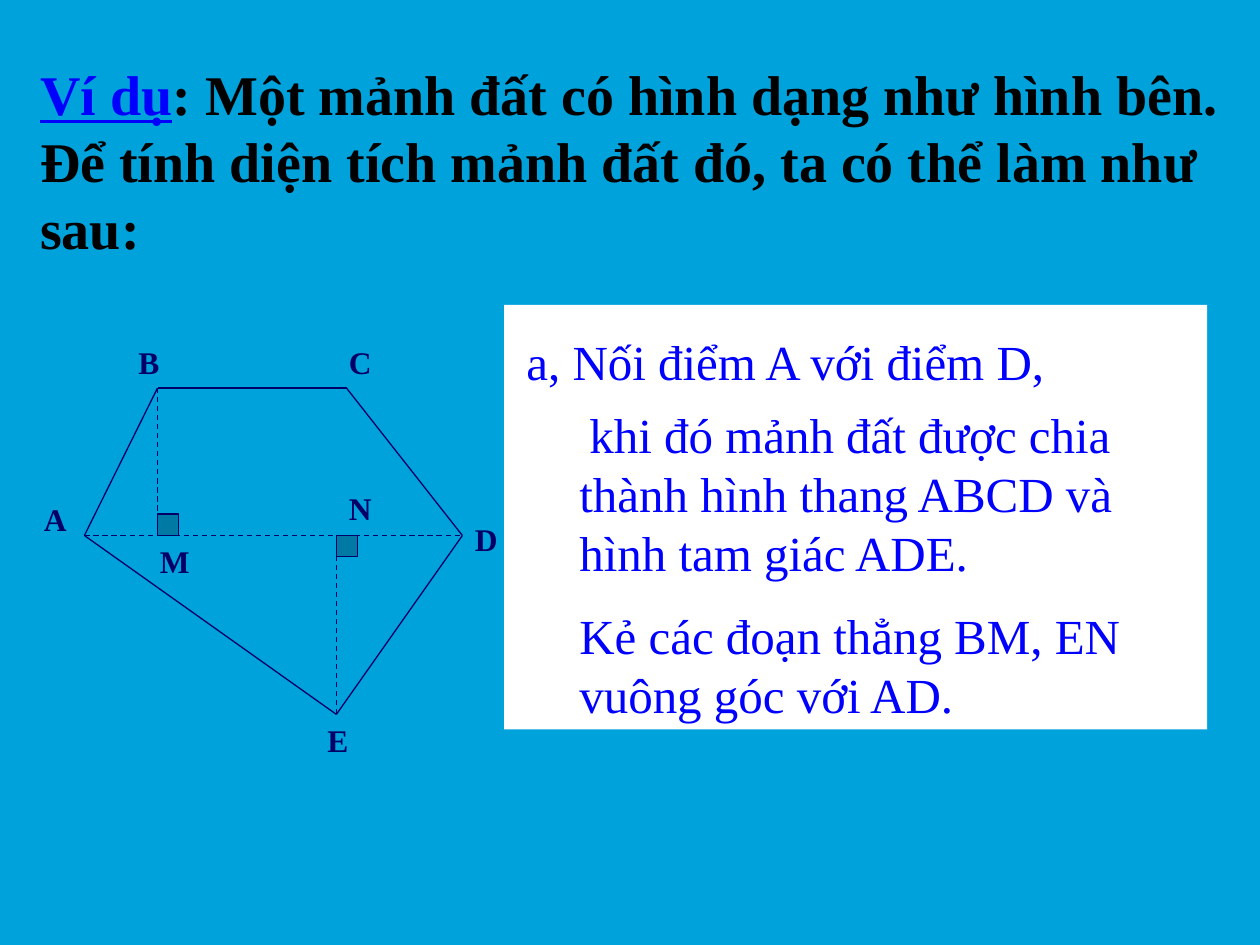
from lxml import etree
from pptx import Presentation
from pptx.dml.color import RGBColor
from pptx.enum.dml import MSO_LINE
from pptx.enum.shapes import MSO_CONNECTOR, MSO_SHAPE
from pptx.enum.text import MSO_ANCHOR, PP_ALIGN
from pptx.oxml.ns import qn
from pptx.util import Inches, Pt

STRAIGHT = MSO_CONNECTOR.STRAIGHT
RECT = MSO_SHAPE.RECTANGLE
DASH = MSO_LINE.DASH
LEFT = PP_ALIGN.LEFT
TOP, BOTTOM = MSO_ANCHOR.TOP, MSO_ANCHOR.BOTTOM

FONT = "Times New Roman"
SKY, NAVY, TEAL, BLUE = "00A2DC", "000066", "0079A4", "0000FF"
BLACK, WHITE = "000000", "FFFFFF"

TITLE = [
    ("Ví dụ", BLUE, True),
    (": Một mảnh đất có hình dạng như hình bên. "
     "Để tính diện tích mảnh đất đó, ta có thể làm như sau:", BLACK, False),
]
STEP = "a, Nối điểm A với điểm D,"
DETAILS = [
    ("khi đó mảnh đất được chia thành hình thang ABCD và hình tam giác ADE.", 0.08, 0),
    ("Kẻ các đoạn thẳng BM, EN vuông góc với AD.", 0, 14),
]
POINTS = {
    "A": (0.67, 4.25), "B": (1.25, 3.08), "C": (2.75, 3.08), "D": (3.67, 4.25),
    "E": (2.67, 5.67), "M": (1.25, 4.25), "N": (2.67, 4.25),
}
LABELS = {
    "A": (0.25, 3.92), "B": (1, 2.67), "C": (2.67, 2.67), "D": (3.67, 4.08),
    "E": (2.5, 5.67), "M": (1.17, 4.25), "N": (2.67, 3.83),
}
DASHED = ["AD", "BM", "EN"]
SIDES = ["BC", "BA", "CD", "AE", "ED"]
MARK = 0.17
RIGHT_ANGLES = [("M", -MARK), ("N", 0)]


def rgb(value):
    return RGBColor.from_string(value)


def add_run(p, text, size, color, bold=False, underline=False):
    r = p.add_run()
    r.text = text
    f = r.font
    f.name, f.size, f.bold, f.underline = FONT, Pt(size), bold, underline
    f.color.rgb = rgb(color)


def add_text(shapes, x, y, w, h, wrap=True):
    tf = shapes.add_textbox(Inches(x), Inches(y), Inches(w), Inches(h)).text_frame
    tf.word_wrap = wrap
    return tf.paragraphs[0]


def add_line(shapes, ends, dash=None):
    (x1, y1), (x2, y2) = (POINTS[name] for name in ends)
    line = shapes.add_connector(STRAIGHT, Inches(x1), Inches(y1), Inches(x2), Inches(y2))
    line.line.color.rgb = rgb(NAVY)
    line.line.width = Pt(0.75)
    if dash:
        line.line.dash_style = dash
    etree.SubElement(line._element.spPr, qn("a:effectLst"))


def add_rect(shapes, x, y, w, h, fill, line=None):
    sp = shapes.add_shape(RECT, Inches(x), Inches(y), Inches(w), Inches(h))
    sp.shadow.inherit = False
    sp.fill.solid()
    sp.fill.fore_color.rgb = rgb(fill)
    if line:
        sp.line.color.rgb = rgb(line)
        sp.line.width = Pt(0.75)
    else:
        sp.line.fill.background()
    return sp


def add_label(shapes, name):
    add_run(add_text(shapes, *LABELS[name], 0.42, 0.4), name, 18, NAVY, bold=True)


prs = Presentation()
prs.slide_width, prs.slide_height = Inches(10), Inches(7.5)
s = prs.slides.add_slide(prs.slide_layouts[6])
s.background.fill.solid()
s.background.fill.fore_color.rgb = rgb(SKY)

p = add_text(s.shapes, 0.22, 0.42, 10, 1.7)
for text, color, underline in TITLE:
    add_run(p, text, 32, color, bold=True, underline=underline)

for ends in DASHED:
    add_line(s.shapes, ends, DASH)
for name, dy in RIGHT_ANGLES:
    x, y = POINTS[name]
    add_rect(s.shapes, x, y + dy, MARK, MARK, TEAL, NAVY)
for name in "NM":
    add_label(s.shapes, name)

pentagon = s.shapes.add_group_shape().shapes
for ends in SIDES:
    add_line(pentagon, ends)
for name in "ADBCE":
    add_label(pentagon, name)

tf = add_rect(s.shapes, 4, 2.42, 5.58, 3.37, WHITE).text_frame
tf.word_wrap = True
tf.vertical_anchor = BOTTOM
for i, (text, indent, before) in enumerate(DETAILS):
    p = tf.add_paragraph() if i else tf.paragraphs[0]
    p.alignment = LEFT
    p.space_before = Pt(before)
    pPr = p._p.get_or_add_pPr()
    pPr.set("marL", str(Inches(0.5)))
    pPr.set("indent", str(Inches(indent)))
    add_run(p, text, 28, BLUE)

add_run(add_text(s.shapes, 4.08, 2.58, 4.36, 0.57, wrap=False), STEP, 28, BLUE)

prs.save("out.pptx")
